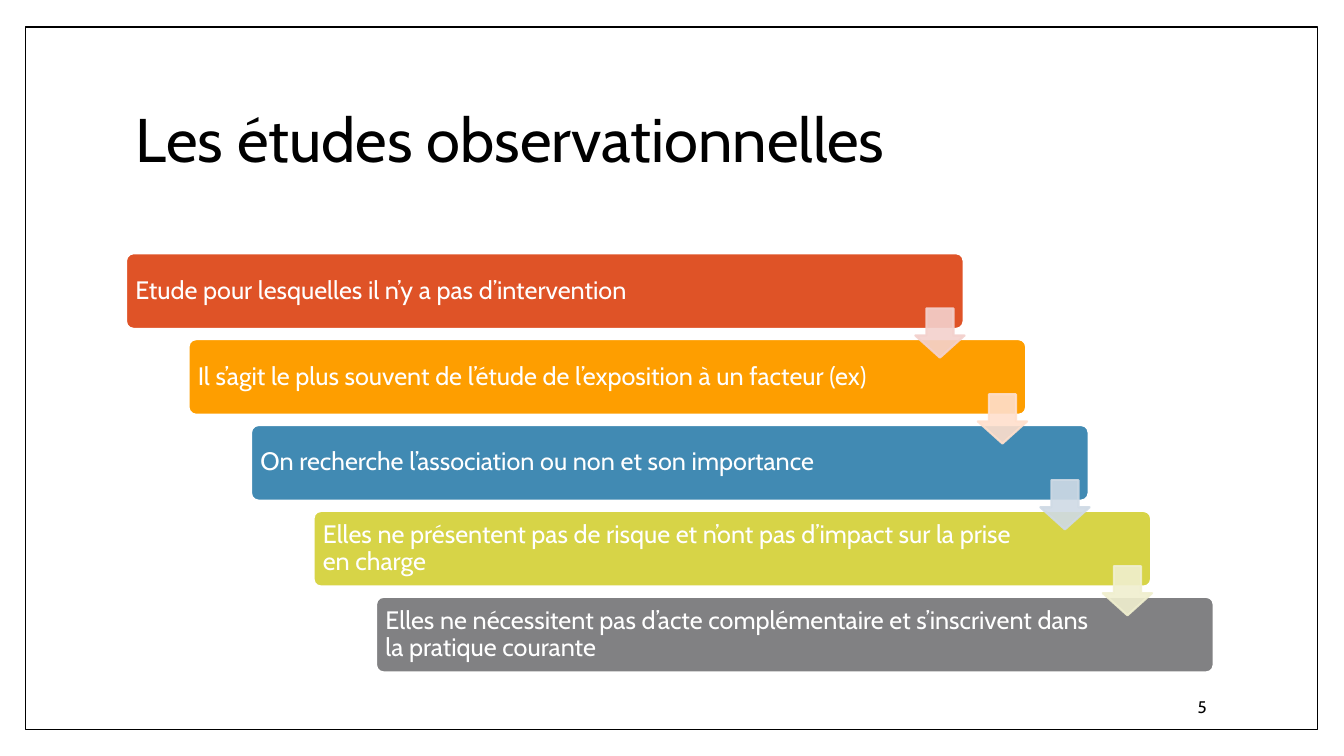
from pptx import Presentation
from pptx import util as u
from pptx.dml.color import RGBColor
from pptx.enum import shapes, text
from pptx.oxml.ns import qn
from lxml import etree

# Content
TITLE = "Les études observationnelles"
PAGE = "5"
STEPS = [
    ("Etude pour lesquelles il n’y a pas d’intervention", "red", "pink"),
    ("Il s’agit le plus souvent de l’étude de l’exposition à un facteur (ex)",
     "orange", "peach"),
    ("On recherche l’association ou non et son importance", "blue", "sky"),
    ("Elles ne présentent pas de risque et n’ont pas d’impact sur la prise en charge",
     "lime", "cream"),
    ("Elles ne nécessitent pas d’acte complémentaire et s’inscrivent dans la pratique courante",
     "grey", None),
]
COLORS = {
    "white": "FFFFFF", "black": "000000",
    "red": "DF5327", "orange": "FE9E00", "blue": "418AB3",
    "lime": "D7D447", "grey": "818183",
    "pink": "F3D1CD", "peach": "FFDFCC", "sky": "CFDAE5", "cream": "F0EFCF",
}
FONT = "Cabin"

# Layout in points
LEFT, TOP = 90, 180.9
WIDE, HIGH = 598.3, 54
DX, DY = 44.65, 61.35
ARROW = 35.2
ARROW_DX, ARROW_DY = 563.8, 39.4

Kind = shapes.MSO_SHAPE
Align = text.PP_ALIGN


def rgb(name):
    return RGBColor.from_string(COLORS[name])


def draw(kind, box, fill, line, width, adj=()):
    shape = slide.shapes.add_shape(kind, *map(u.Pt, box))
    shape.shadow.inherit = False
    shape.fill.solid()
    shape.fill.fore_color.rgb = rgb(fill)
    shape.line.color.rgb = rgb(line)
    shape.line.width = u.Pt(width)
    for i, value in enumerate(adj):
        shape.adjustments[i] = value
    return shape


def write(shape, words, size, color, align=Align.LEFT, space=1.0,
          pads=(7.2, 3.6, 7.2, 3.6)):
    frame = shape.text_frame
    frame.word_wrap = True
    frame.vertical_anchor = text.MSO_ANCHOR.MIDDLE
    (frame.margin_left, frame.margin_top,
     frame.margin_right, frame.margin_bottom) = map(u.Pt, pads)
    frame.text = words
    para = frame.paragraphs[0]
    para.alignment = align
    para.line_spacing = space
    font = para.runs[0].font
    font.name = FONT
    font.size = u.Pt(size)
    font.color.rgb = rgb(color)


def fade(shape, percent):
    for color in shape._element.spPr.iter(qn("a:srgbClr")):
        etree.SubElement(color, qn("a:alpha")).set("val", str(percent * 1000))


deck = Presentation()
deck.slide_width, deck.slide_height = u.Pt(960), u.Pt(540)
slide = deck.slides.add_slide(deck.slide_layouts[6])

# Frame, title and page number
draw(Kind.RECTANGLE, (18, 19.4, 923, 501.8), "white", "black", 1)
title = slide.shapes.add_textbox(*map(u.Pt, (90, 48.2, 777.6, 106.6)))
write(title, TITLE, 44, "black", space=0.9)
page = slide.shapes.add_textbox(*map(u.Pt, (734.4, 490.3, 134.6, 28.8)))
write(page, PAGE, 12, "black", Align.RIGHT)

# Staircase of bars
for i, (words, fill, _) in enumerate(STEPS):
    bar = draw(Kind.ROUNDED_RECTANGLE, (LEFT + i * DX, TOP + i * DY, WIDE, HIGH),
               fill, "white", 1.5, [0.1])
    write(bar, words, 18, "white", space=0.9, pads=(5.1, 4, 84.8, 4))

# Arrows from each bar to the next
for i, (_, _, tint) in enumerate(STEPS[:-1]):
    box = (LEFT + i * DX + ARROW_DX, TOP + i * DY + ARROW_DY, ARROW, ARROW)
    arrow = draw(Kind.DOWN_ARROW, box, tint, tint, 1.5, [0.55, 0.45])
    fade(arrow, 90)

deck.save("out.pptx")
